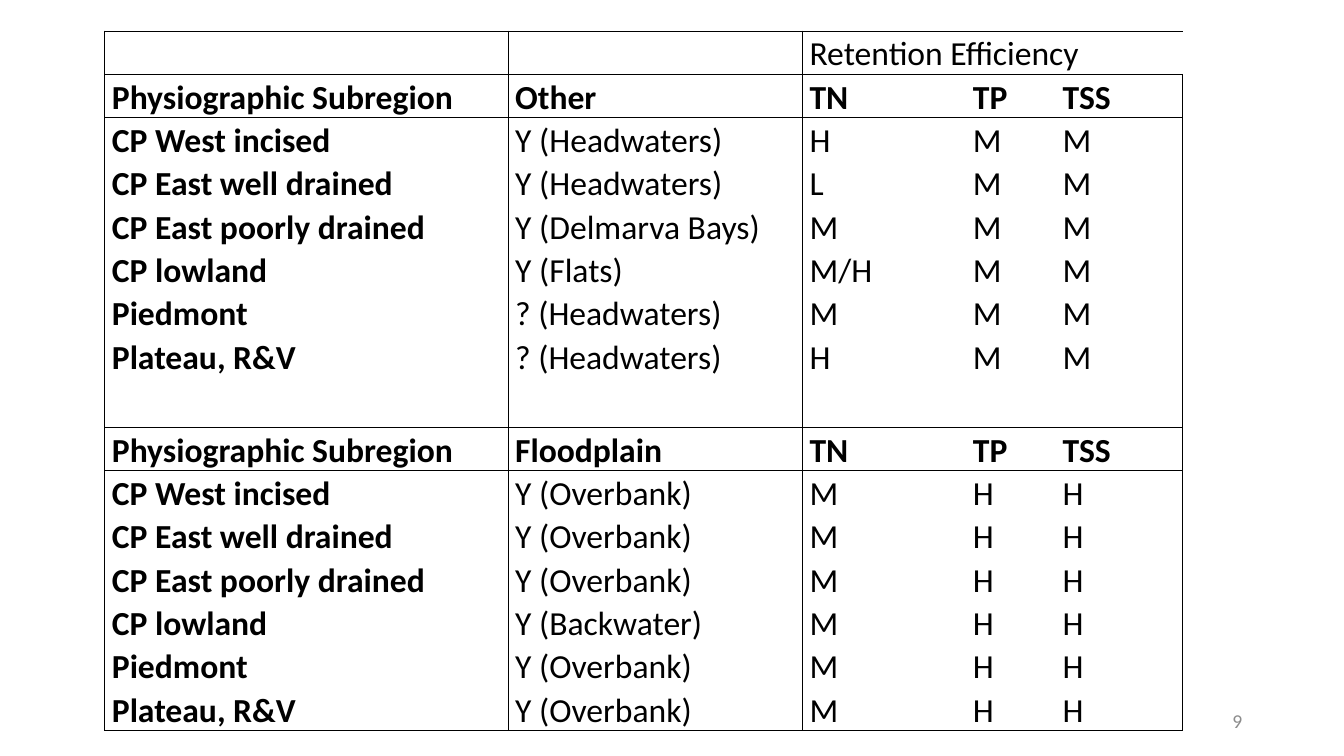
"""Build the slide of retention efficiency by physiographic subregion."""
from dataclasses import dataclass

from lxml.etree import SubElement
from pptx import Presentation
from pptx.dml.color import RGBColor
from pptx.enum.text import MSO_ANCHOR as Anchor, PP_ALIGN as Align
from pptx.oxml.ns import qn
from pptx.util import Inches, Pt


@dataclass(frozen=True)
class Theme:
    font: str = "Calibri"
    ink: str = "000000"
    muted: str = "8C8C8C"
    body_size: int = 24
    number_size: int = 14
    rule_width: int = 1


theme = Theme()


def write(frame, text, size=theme.body_size, color=theme.ink, bold=False,
          align=Align.LEFT, spacing=1.07):
    """Put one formatted line of text in a frame."""
    para = frame.paragraphs[0]
    para.alignment = align
    para.line_spacing = spacing
    span = para.add_run()
    span.text = text
    span.font.name = theme.font
    span.font.size = Pt(size)
    span.font.bold = bold
    span.font.color.rgb = RGBColor.from_string(color)


def draw_border(cell, side, visible):
    """Rule one side of a cell, or clear it."""
    line = SubElement(cell._tc.get_or_add_tcPr(), qn(f"a:ln{side}"),
                      w=str(Pt(theme.rule_width)))
    if visible:
        fill = SubElement(line, qn("a:solidFill"))
        SubElement(fill, qn("a:srgbClr"), val=theme.ink)
    else:
        SubElement(line, qn("a:noFill"))


subregions = ["CP West incised", "CP East well drained", "CP East poorly drained",
              "CP lowland", "Piedmont", "Plateau, R&V"]
sections = [
    ("Other",
     ["Y (Headwaters)", "Y (Headwaters)", "Y (Delmarva Bays)",
      "Y (Flats)", "? (Headwaters)", "? (Headwaters)"],
     ["H", "L", "M", "M/H", "M", "H"], "M"),
    ("Floodplain",
     ["Y (Overbank)", "Y (Overbank)", "Y (Overbank)",
      "Y (Backwater)", "Y (Overbank)", "Y (Overbank)"],
     ["M"] * 6, "H"),
]
blank_row = [""] * 5
rows = [["", "", "Retention Efficiency", "", ""]]
header_rows = []
for wetland, settings, nitrogen, other_level in sections:
    if header_rows:
        rows.append(blank_row)
    header_rows.append(len(rows))
    rows.append(["Physiographic Subregion", wetland, "TN", "TP", "TSS"])
    for subregion, setting, level in zip(subregions, settings, nitrogen):
        rows.append([subregion, setting, level, other_level, other_level])

column_widths = [4, 2.92, 1.62, 0.89, 1.26]
row_heights = [0.49 if row == blank_row else 0.43 for row in rows]
horizontal_rules = {0, len(rows)}
for header in header_rows:
    horizontal_rules |= {header, header + 1}
vertical_rules = {0, 1, 2, len(column_widths)}

deck = Presentation()
deck.slide_width, deck.slide_height = Inches(13.33), Inches(7.5)
page = deck.slides.add_slide(deck.slide_layouts[6])

box = page.shapes.add_textbox(Inches(9.42), Inches(6.95), Inches(3), Inches(0.4))
box.text_frame.word_wrap = True
box.text_frame.vertical_anchor = Anchor.MIDDLE
write(box.text_frame, "9", size=theme.number_size, color=theme.muted,
      align=Align.RIGHT, spacing=1)

table = page.shapes.add_table(
    len(rows), len(column_widths), Inches(1.04), Inches(0.31),
    Inches(sum(column_widths)), Inches(sum(row_heights))).table
table.first_row = table.horz_banding = False
for column, width in zip(table.columns, column_widths):
    column.width = Inches(width)
for row, height in zip(table.rows, row_heights):
    row.height = Inches(height)

for r, row in enumerate(rows):
    for c, text in enumerate(row):
        cell = table.cell(r, c)
        cell.margin_left = cell.margin_right = Inches(0.07)
        cell.margin_top = cell.margin_bottom = 0
        cell.vertical_anchor = Anchor.BOTTOM
        draw_border(cell, "L", c in vertical_rules)
        draw_border(cell, "R", c + 1 in vertical_rules)
        draw_border(cell, "T", r in horizontal_rules)
        draw_border(cell, "B", r + 1 in horizontal_rules)
        cell.fill.background()
        if text:
            write(cell.text_frame, text, bold=r in header_rows or c == 0)
table.cell(0, 2).merge(table.cell(0, 4))

deck.save("out.pptx")
